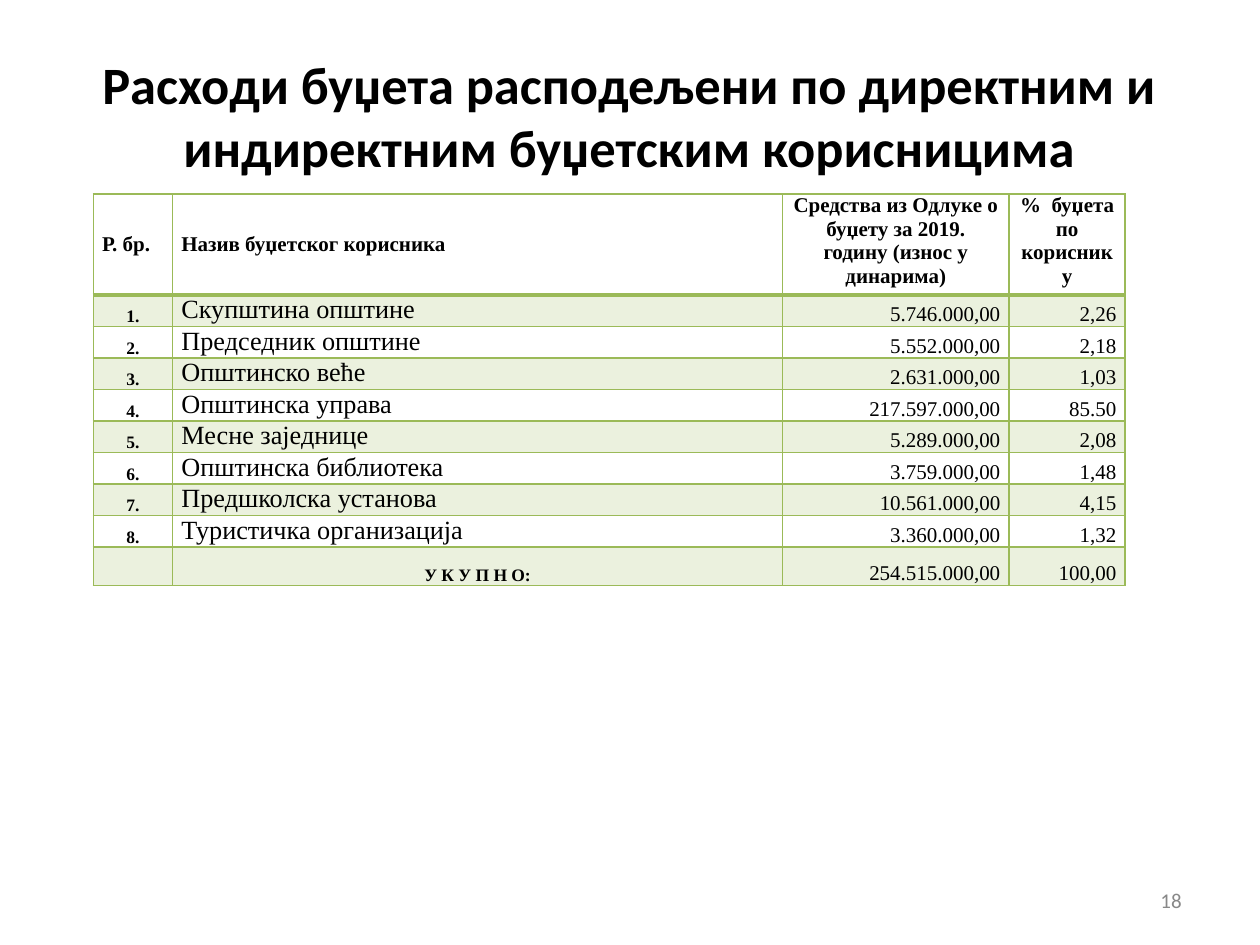
import pptx
import pptx.util
import pptx.dml.color
import pptx.enum.text
import pptx.oxml
import pptx.oxml.ns

Inches, Pt = pptx.util.Inches, pptx.util.Pt
ALIGN, ANCHOR = pptx.enum.text.PP_ALIGN, pptx.enum.text.MSO_ANCHOR
GREEN, BAND, WHITE, BLACK, GREY = "9BBA58", "EBF1DE", "FFFFFF", "000000", "888888"
SERIF, SANS = "Times New Roman", "Calibri"
COLS = [0.63, 4.84, 1.8, 0.92]
ROWS = [0.8] + [0.25] * 8 + [0.23]

HEADER = [
    "Р. бр.",
    "Назив буџетског корисника",
    "Средства из Одлуке о\nбуџету за 2019.\vгодину (износ у\vдинарима)",
    "%  буџета\nпо корисник у",
]
USERS = [
    ("Скупштина општине", "5.746.000,00", "2,26"),
    ("Председник општине", "5.552.000,00", "2,18"),
    ("Општинско веће", "2.631.000,00", "1,03"),
    ("Општинска управа", "217.597.000,00", "85.50"),
    ("Месне заједнице", "5.289.000,00", "2,08"),
    ("Општинска библиотека", "3.759.000,00", "1,48"),
    ("Предшколска установа", "10.561.000,00", "4,15"),
    ("Туристичка организација", "3.360.000,00", "1,32"),
]
TOTAL = ["", "У К У П Н О:", "254.515.000,00", "100,00"]


def rgb(value):
    return pptx.dml.color.RGBColor.from_string(value)


def format_text(tf, font, size, color, bold=False, align=None, line=None):
    for p in tf.paragraphs:
        p.alignment = align
        if line:
            p.line_spacing = Pt(line)
        for r in p.runs:
            r.font.name, r.font.size, r.font.bold = font, Pt(size), bold
            r.font.color.rgb = rgb(color)


def clear_margins(item):
    item.margin_left = item.margin_top = item.margin_right = item.margin_bottom = 0


def add_title(s, box, text):
    sp = s.shapes.title
    sp.left, sp.top, sp.width, sp.height = map(Inches, box)
    tf = sp.text_frame
    tf.text = text
    clear_margins(tf)
    tf.vertical_anchor = ANCHOR.TOP
    format_text(tf, SANS, 30, BLACK, True, ALIGN.CENTER)


def add_page_number(s, box, text):
    tf = s.shapes.add_textbox(*map(Inches, box)).text_frame
    tf.text = text
    clear_margins(tf)
    format_text(tf, SANS, 12, GREY, line=12.4)


def set_borders(cell, bottom, top):
    widths = {"L": 1, "R": 1, "T": top, "B": bottom}
    tc_pr = cell._tc.get_or_add_tcPr()
    for i, (side, width) in enumerate(widths.items()):
        tc_pr.insert(i, pptx.oxml.parse_xml(
            f'<a:ln{side} {pptx.oxml.ns.nsdecls("a")} w="{Pt(width)}">'
            f'<a:solidFill><a:srgbClr val="{GREEN}"/></a:solidFill></a:ln{side}>'))


def cell_style(row, col):
    if row == 0:
        if col < 2:
            return 12, True, ALIGN.LEFT, 13.4, ANCHOR.MIDDLE
        return 12, True, ALIGN.CENTER, 13.4, ANCHOR.TOP
    if col > 1:
        return 12, False, ALIGN.RIGHT, 13.8, ANCHOR.BOTTOM
    if col == 1 and row < len(ROWS) - 1:
        return 15, False, ALIGN.LEFT, 17, ANCHOR.TOP
    return 10, True, ALIGN.CENTER, 11.3, ANCHOR.BOTTOM


def add_budget_table(s, box, data):
    table = s.shapes.add_table(len(ROWS), len(COLS), *map(Inches, box)).table
    table.first_row = table.horz_banding = False
    for column, width in zip(table.columns, COLS):
        column.width = Inches(width)
    for row, height in zip(table.rows, ROWS):
        row.height = Inches(height)
    for i, values in enumerate(data):
        for j, text in enumerate(values):
            cell = table.cell(i, j)
            cell.text = text
            clear_margins(cell)
            cell.margin_left = cell.margin_right = Inches(0.07)
            size, bold, align, line, anchor = cell_style(i, j)
            cell.vertical_anchor = anchor
            format_text(cell.text_frame, SERIF, size, BLACK, bold, align, line)
            cell.fill.solid()
            cell.fill.fore_color.rgb = rgb(BAND if i % 2 else WHITE)
            set_borders(cell, 2.25 if i == 0 else 1, 2.25 if i == 1 else 1)


def main():
    prs = pptx.Presentation()
    prs.slide_width, prs.slide_height = Inches(10), Inches(7.5)
    s = prs.slides.add_slide(prs.slide_layouts[5])
    add_title(s, (0.64, 0.41, 8.71, 1.08),
              "Расходи буџета расподељени по директним и индиректним буџетским корисницима")
    numbered = [(f"{n}.", *user) for n, user in enumerate(USERS, 1)]
    add_budget_table(s, (0.74, 1.54, sum(COLS), sum(ROWS)), [HEADER, *numbered, TOTAL])
    add_page_number(s, (9.21, 7.07, 0.22, 0.19), "18")
    prs.save("out.pptx")


if __name__ == "__main__":
    main()
